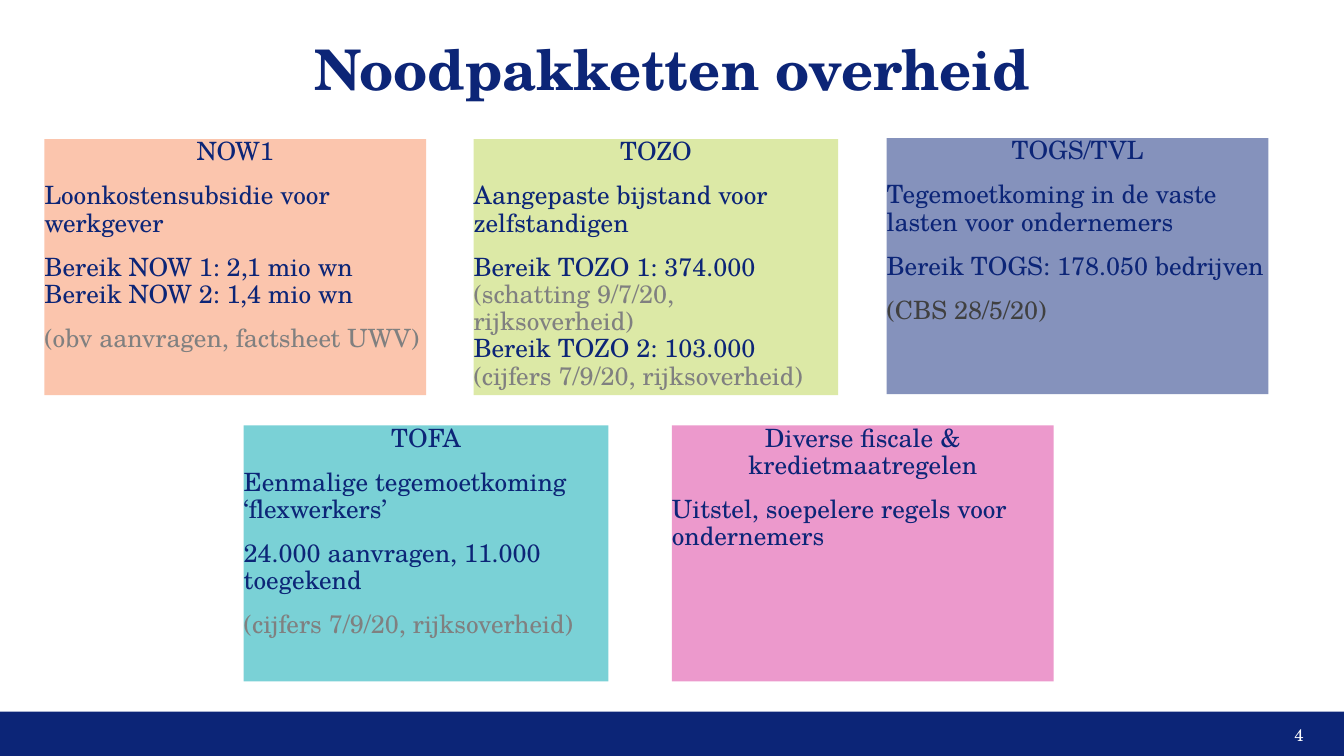
"""Build the slide about the Dutch government emergency packages."""
from dataclasses import dataclass

from pptx import Presentation
from pptx.dml.color import RGBColor
from pptx.enum.shapes import MSO_SHAPE
from pptx.enum.text import MSO_ANCHOR, MSO_AUTO_SIZE, PP_ALIGN
from pptx.slide import Slide
from pptx.text.text import TextFrame, _Paragraph
from pptx.util import Pt


@dataclass(frozen=True)
class Theme:
    """Colours, font and type sizes of the slide."""
    font: str = "TeX Gyre Schola"
    navy: str = "0C2577"
    white: str = "FFFFFF"
    grey: str = "808080"
    charcoal: str = "404040"
    peach: str = "FBC5AD"
    lime: str = "DCE9A6"
    slate: str = "8592BC"
    teal: str = "7AD1D6"
    pink: str = "EC99CC"
    title_size: int = 40
    body_size: int = 18
    number_size: int = 12


THEME = Theme()


@dataclass(frozen=True)
class Span:
    """One line of text in one colour."""
    text: str
    color: str = THEME.navy


@dataclass(frozen=True)
class Package:
    """A coloured box with a heading and paragraphs made of lines."""
    left: float
    top: float
    width: float
    fill: str
    heading: str
    paragraphs: tuple[tuple[Span, ...], ...]


PAGE_WIDTH, PAGE_HEIGHT = 960.48, 540
FOOTER_TOP = 508.3
WIDE, NARROW, BOX_HEIGHT = 272.9, 260.6, 182.9
UPPER, LOWER = 99.4, 303.8

PACKAGES = (
    Package(31.7, UPPER, WIDE, THEME.peach, "NOW1", (
        (Span("Loonkostensubsidie voor werkgever"),),
        (Span("Bereik NOW 1: 2,1 mio wn"), Span("Bereik NOW 2: 1,4 mio wn")),
        (Span("(obv aanvragen, factsheet UWV)", THEME.grey),),
    )),
    Package(338.4, UPPER, NARROW, THEME.lime, "TOZO", (
        (Span("Aangepaste bijstand voor zelfstandigen"),),
        (Span("Bereik TOZO 1: 374.000"),
         Span("(schatting 9/7/20, rijksoverheid)", THEME.grey),
         Span("Bereik TOZO 2: 103.000"),
         Span("(cijfers 7/9/20, rijksoverheid)", THEME.grey)),
    )),
    Package(633.6, 98.7, WIDE, THEME.slate, "TOGS/TVL", (
        (Span("Tegemoetkoming in de vaste lasten voor ondernemers"),),
        (Span("Bereik TOGS: 178.050 bedrijven"),),
        (Span("(CBS 28/5/20)", THEME.charcoal),),
    )),
    Package(174.2, LOWER, NARROW, THEME.teal, "TOFA", (
        (Span("Eenmalige tegemoetkoming ‘flexwerkers’"),),
        (Span("24.000 aanvragen, 11.000 toegekend"),),
        (Span("(cijfers 7/9/20, rijksoverheid)", THEME.grey),),
    )),
    Package(480.2, LOWER, WIDE, THEME.pink, "Diverse fiscale & kredietmaatregelen", (
        (Span("Uitstel, soepelere regels voor ondernemers"),),
    )),
)


def apply(target: object, values: dict[str, object]) -> None:
    """Set each named attribute on the target."""
    for name, value in values.items():
        setattr(target, name, value)


def format_frame(frame: TextFrame, anchor: MSO_ANCHOR, margin: float = 0) -> None:
    """Wrap the text and set its anchor and margins."""
    sides = ("left", "top", "right", "bottom")
    apply(frame, {"word_wrap": True, "auto_size": MSO_AUTO_SIZE.NONE, "vertical_anchor": anchor}
          | {f"margin_{side}": Pt(margin) for side in sides})


def add_span(para: _Paragraph, span: Span, size: int, bold: bool = False) -> None:
    """Append a formatted run to the paragraph."""
    run = para.add_run()
    run.text = span.text
    apply(run.font, {"name": THEME.font, "size": Pt(size), "bold": bold})
    run.font.color.rgb = RGBColor.from_string(span.color)


def add_rectangle(page: Slide, left: float, top: float, width: float,
                  height: float, fill: str) -> TextFrame:
    """Draw a plain filled rectangle and return its text frame."""
    box = page.shapes.add_shape(MSO_SHAPE.RECTANGLE, Pt(left), Pt(top), Pt(width), Pt(height))
    box.shadow.inherit = False
    box.fill.solid()
    box.fill.fore_color.rgb = RGBColor.from_string(fill)
    box.line.fill.background()
    return box.text_frame


def add_title(page: Slide, text: str) -> None:
    """Place and format the title placeholder."""
    title = page.shapes.title
    apply(title, {"left": Pt(31.7), "top": Pt(31.7), "width": Pt(897.1), "height": Pt(33.8)})
    format_frame(title.text_frame, MSO_ANCHOR.MIDDLE)
    para = title.text_frame.paragraphs[0]
    para.alignment = PP_ALIGN.CENTER
    add_span(para, Span(text), THEME.title_size, bold=True)


def add_package(page: Slide, package: Package) -> None:
    """Draw one package box with its heading and text."""
    frame = add_rectangle(page, package.left, package.top, package.width, BOX_HEIGHT, package.fill)
    format_frame(frame, MSO_ANCHOR.TOP)
    for index, lines in enumerate(((Span(package.heading),), *package.paragraphs)):
        para = frame.add_paragraph() if index else frame.paragraphs[0]
        apply(para, {
            "alignment": PP_ALIGN.LEFT if index else PP_ALIGN.CENTER,
            "line_spacing": 0.9,
            "space_before": Pt(6 if index else 0),
            "space_after": Pt(6),
        })
        for position, span in enumerate(lines):
            if position:
                para.add_line_break()
            add_span(para, span, THEME.body_size)


def add_footer(page: Slide, number: str) -> None:
    """Draw the footer band and the page number."""
    add_rectangle(page, 0, FOOTER_TOP, PAGE_WIDTH, PAGE_HEIGHT - FOOTER_TOP, THEME.navy)
    box = page.shapes.add_textbox(Pt(722.9), Pt(FOOTER_TOP), Pt(216), Pt(33))
    format_frame(box.text_frame, MSO_ANCHOR.MIDDLE, margin=7.2)
    para = box.text_frame.paragraphs[0]
    para.alignment = PP_ALIGN.RIGHT
    add_span(para, Span(number, THEME.white), THEME.number_size)


def main() -> None:
    """Build and save the deck."""
    deck = Presentation()
    apply(deck, {"slide_width": Pt(PAGE_WIDTH), "slide_height": Pt(PAGE_HEIGHT)})
    page = deck.slides.add_slide(deck.slide_layouts.get_by_name("Title Only"))
    add_footer(page, "4")
    add_title(page, "Noodpakketten overheid")
    for package in PACKAGES:
        add_package(page, package)
    deck.save("out.pptx")


if __name__ == "__main__":
    main()
